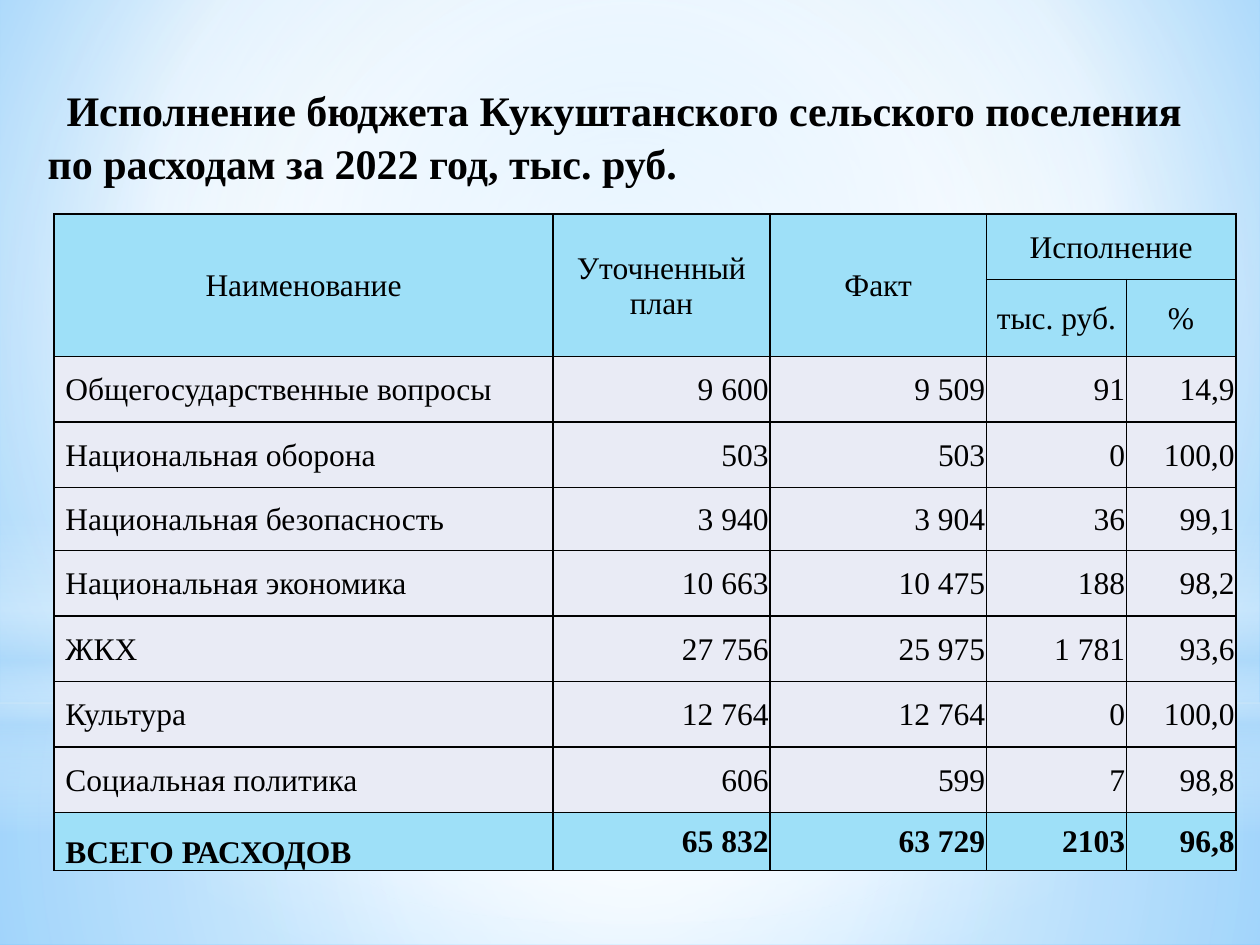
"""Build the budget expenditure slide: layered sky background, title and table."""
from dataclasses import dataclass

from lxml.etree import SubElement
from pptx import Presentation
from pptx.dml.color import RGBColor
from pptx.enum.shapes import MSO_SHAPE as Shape
from pptx.enum.text import MSO_ANCHOR as Anchor, PP_ALIGN as Align
from pptx.oxml.ns import qn
from pptx.util import Inches, Pt

WHITE = RGBColor(0xFF, 0xFF, 0xFF)
BLACK = RGBColor(0, 0, 0)
SKY = RGBColor(0x9E, 0xD5, 0xFF)
DEEP = RGBColor(0x5B, 0xB9, 0xFF)
MIST = RGBColor(0xB4, 0xDC, 0xFA)
HEAD = RGBColor(0x9E, 0xE0, 0xF8)
BODY = RGBColor(0xE9, 0xEB, 0xF5)
FONT = "Times New Roman"
WIDTH, HEIGHT = Inches(10), Inches(7.5)
UNIT = WIDTH // 100
CENTRE = (50, 50, 50, 50)

COLS = (39.6, 17.2, 17.2, 11.1, 8.7)
ROWS = (5.2, 5.6, 5.2, 5.2, 5, 5.2, 5.2, 5.2, 5.2, 4.6)
MERGES = ((0, 0, 1, 0), (0, 1, 1, 1), (0, 2, 1, 2), (0, 3, 0, 4))
DATA = (
    ("Наименование", "Уточненный план", "Факт", "Исполнение", ""),
    ("", "", "", "тыс. руб.", "%"),
    ("Общегосударственные вопросы", "9 600", "9 509", "91", "14,9"),
    ("Национальная оборона", "503", "503", "0", "100,0"),
    ("Национальная безопасность", "3 940", "3 904", "36", "99,1"),
    ("Национальная экономика", "10 663", "10 475", "188", "98,2"),
    ("ЖКХ", "27 756", "25 975", "1 781", "93,6"),
    ("Культура", "12 764", "12 764", "0", "100,0"),
    ("Социальная политика", "606", "599", "7", "98,8"),
    ("ВСЕГО РАСХОДОВ", "65 832", "63 729", "2103", "96,8"),
)
HEAD_ROWS, TOTAL_ROW = 2, len(DATA) - 1


@dataclass(frozen=True)
class Box:
    """Place on a grid of 100 columns by 75 rows."""
    col: float
    row: float
    cols: float
    rows: float

    def emu(self) -> list[int]:
        """Return left, top, width and height."""
        return [round(v * UNIT) for v in (self.col, self.row, self.cols, self.rows)]


@dataclass(frozen=True)
class Gradient:
    """Stops of position, colour and opacity; circular unless focus is None."""
    stops: tuple
    focus: tuple | None = CENTRE


@dataclass(frozen=True)
class Layer:
    """One translucent background shape."""
    kind: Shape
    box: Box
    gradient: Gradient


BACKDROP = Gradient(((0, SKY, 100), (60, WHITE, 100), (100, DEEP, 100)), (20, 10, 20, 60))
LAYERS = (
    Layer(Shape.RECTANGLE, Box(0, 55.8, 100, 19.2),
          Gradient(((0, WHITE, 91), (37, WHITE, 76), (100, MIST, 79)))),
    Layer(Shape.RECTANGLE, Box(0, 0, 100, 55.8),
          Gradient(((0, WHITE, 89), (48, WHITE, 62), (100, MIST, 79)))),
    Layer(Shape.RECTANGLE, Box(0, 41.2, 100, 25),
          Gradient(((0, WHITE, 0), (29, WHITE, 30), (45, MIST, 40),
                    (55, WHITE, 26), (65, MIST, 60), (100, WHITE, 0)), None)),
    Layer(Shape.OVAL, Box(0, 17.5, 100, 55.8),
          Gradient(((0, WHITE, 100), (56, WHITE, 0)))),
)


def apply_gradient(owner, gradient: Gradient) -> None:
    """Turn the solid fill of a shape or background into a gradient."""
    owner.fill.solid()
    root = owner.element if hasattr(owner, "element") else owner._element
    solid = root.find(".//" + qn("a:solidFill"))
    grad = solid.makeelement(qn("a:gradFill"), {"rotWithShape": "1"})
    solid.getparent().replace(solid, grad)
    stops = SubElement(grad, qn("a:gsLst"))
    for pos, color, opacity in gradient.stops:
        gs = SubElement(stops, qn("a:gs"), pos=str(pos * 1000))
        clr = SubElement(gs, qn("a:srgbClr"), val=str(color))
        if opacity < 100:
            SubElement(clr, qn("a:alpha"), val=str(opacity * 1000))
    if gradient.focus is None:
        SubElement(grad, qn("a:lin"), ang="5400000", scaled="0")
    else:
        circle = SubElement(grad, qn("a:path"), path="circle")
        sides = {k: str(v * 1000) for k, v in zip("ltrb", gradient.focus)}
        SubElement(circle, qn("a:fillToRect"), **sides)


def add_layer(s, layer: Layer) -> None:
    """Draw one background shape."""
    sp = s.shapes.add_shape(layer.kind, *layer.box.emu())
    sp.shadow.inherit = False
    apply_gradient(sp, layer.gradient)
    sp.line.fill.background()


def add_run(p, text: str, size: float, bold: bool = False) -> None:
    """Add a black run."""
    r = p.add_run()
    r.text = text
    r.font.name, r.font.size, r.font.bold = FONT, Pt(size), bold
    r.font.color.rgb = BLACK


def add_title(s, box: Box) -> None:
    """Write the title on two lines, the first one indented."""
    tf = s.shapes.add_textbox(*box.emu()).text_frame
    tf.word_wrap = True
    p = tf.paragraphs[0]
    p.line_spacing = 1.05
    p._p.get_or_add_pPr().set("indent", str(Inches(0.15)))
    add_run(p, "Исполнение бюджета Кукуштанского сельского поселения", 24, True)
    p.add_line_break()
    add_run(p, "по расходам за 2022 год, тыс. руб.", 24, True)


def add_borders(cell) -> None:
    """Rule all four sides of a cell."""
    tc_pr = cell._tc.get_or_add_tcPr()
    for i, side in enumerate("LRTB"):
        ln = tc_pr.makeelement(qn(f"a:ln{side}"), {"w": str(Pt(1))})
        SubElement(SubElement(ln, qn("a:solidFill")), qn("a:srgbClr"), val=str(BLACK))
        tc_pr.insert(i, ln)


def fill_cell(cell, text: str, row: int, col: int) -> None:
    """Style a cell by its place in the table and write its text."""
    head, total = row < HEAD_ROWS, row == TOTAL_ROW
    cell.fill.solid()
    cell.fill.fore_color.rgb = HEAD if head or total else BODY
    add_borders(cell)
    cell.margin_left = cell.margin_right = cell.margin_top = Inches(0.01)
    cell.margin_bottom = 0
    cell.vertical_anchor = Anchor.BOTTOM if total and col == 0 else Anchor.MIDDLE
    p = cell.text_frame.paragraphs[0]
    p.alignment = Align.CENTER if head else Align.RIGHT if col else Align.LEFT
    if col == 0 and not head:
        p._p.get_or_add_pPr().set("marL", str(Inches(0.08)))
    if text:
        add_run(p, text, 18, total)


def add_budget(s, col: float, row: float) -> None:
    """Draw the expenditure table."""
    box = Box(col, row, sum(COLS), sum(ROWS))
    table = s.shapes.add_table(len(ROWS), len(COLS), *box.emu()).table
    table.first_row = table.horz_banding = False
    for column, width in zip(table.columns, COLS):
        column.width = round(width * UNIT)
    for line, height in zip(table.rows, ROWS):
        line.height = round(height * UNIT)
    for r, values in enumerate(DATA):
        for c, text in enumerate(values):
            fill_cell(table.cell(r, c), text, r, c)
    for top, left, bottom, right in MERGES:
        table.cell(top, left).merge(table.cell(bottom, right))


def main() -> None:
    """Build and save the slide."""
    prs = Presentation()
    prs.slide_width, prs.slide_height = WIDTH, HEIGHT
    s = prs.slides.add_slide(prs.slide_layouts[6])
    s.background.fill.solid()
    apply_gradient(s.background, BACKDROP)
    for layer in LAYERS:
        add_layer(s, layer)
    add_title(s, Box(2.8, 6, 94.5, 9))
    add_budget(s, 4.3, 17)
    prs.save("out.pptx")


if __name__ == "__main__":
    main()
